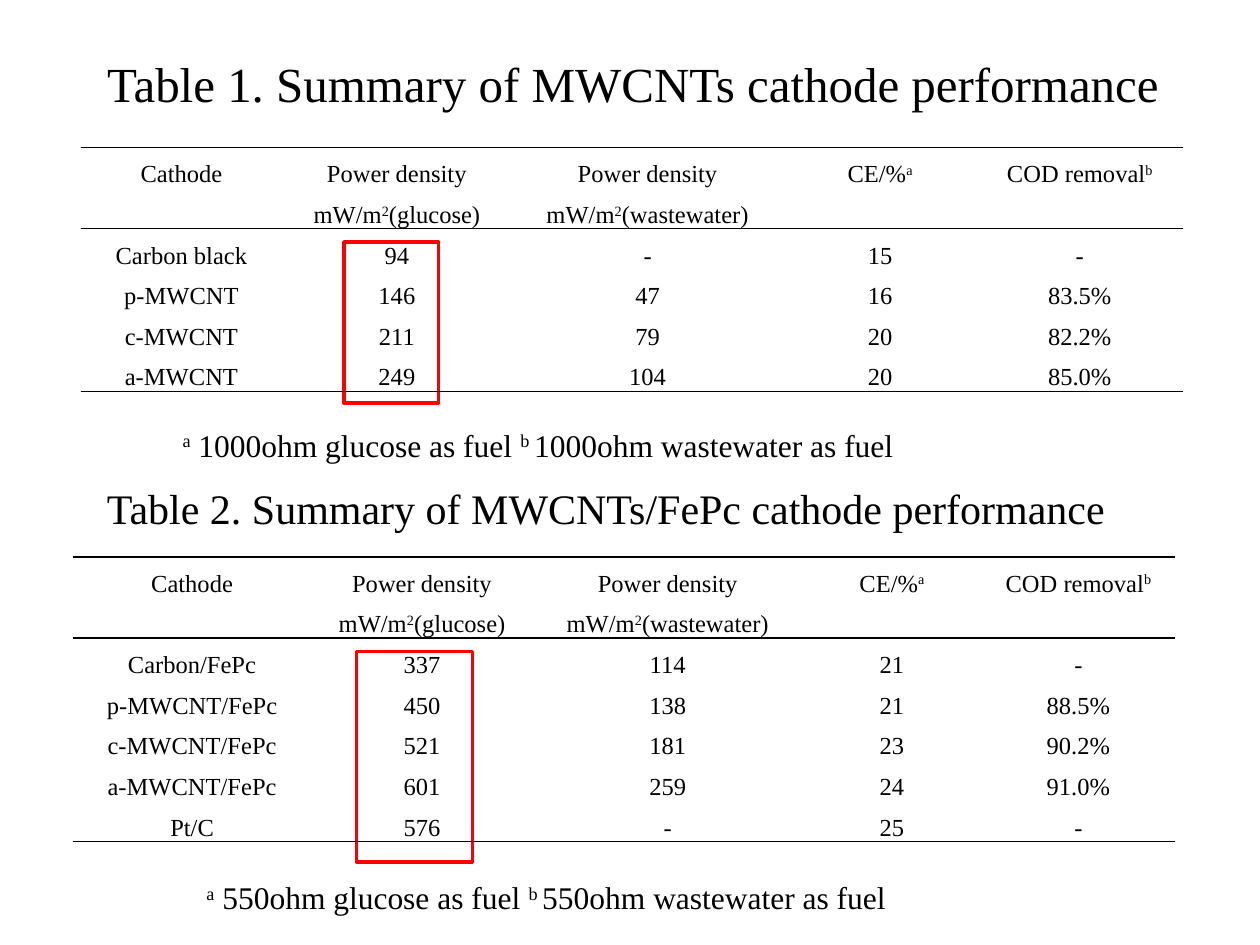
from dataclasses import dataclass

from lxml import etree
from pptx import Presentation
from pptx import util as u
from pptx.dml.color import RGBColor
from pptx.enum import shapes, text
from pptx.oxml import ns


@dataclass(frozen=True)
class Theme:
    font: str = "Times New Roman"
    ink: str = "000000"
    paper: str = "FFFFFF"
    mark: str = "FF0000"
    title: int = 28
    head: int = 24
    note: int = 18
    cell: int = 14
    rule: float = 1
    frame: float = 2


THEME = Theme()
PLAIN = "{2D5ABB26-0587-4C30-8999-92F81FD0307C}"
HEADS = ["Cathode", "Power density\nmW/m|2|(glucose)",
         "Power density\nmW/m|2|(wastewater)", "CE/%|a|", "COD removal|b|"]
CARBON = [
    ["Carbon black", "94", "-", "15", "-"],
    ["p-MWCNT", "146", "47", "16", "83.5%"],
    ["c-MWCNT", "211", "79", "20", "82.2%"],
    ["a-MWCNT", "249", "104", "20", "85.0%"],
]
IRON = [
    ["Carbon/FePc", "337", "114", "21", "-"],
    ["p-MWCNT/FePc", "450", "138", "21", "88.5%"],
    ["c-MWCNT/FePc", "521", "181", "23", "90.2%"],
    ["a-MWCNT/FePc", "601", "259", "24", "91.0%"],
    ["Pt/C", "576", "-", "25", "-"],
]


def write(frame, words, size, align=text.PP_ALIGN.LEFT, space=1.0):
    for row, line in enumerate(words.split("\n")):
        para = frame.paragraphs[0] if row == 0 else frame.add_paragraph()
        para.alignment = align
        para.line_spacing = space
        for part, piece in enumerate(line.split("|")):
            if not piece:
                continue
            run = para.add_run()
            run.text = piece
            run.font.name = THEME.font
            run.font.size = u.Pt(size)
            run.font.color.rgb = RGBColor.from_string(THEME.ink)
            if part % 2:
                run.font._element.set("baseline", "30000")


def place(shape, left, top, width, height):
    shape.left, shape.top = u.Inches(left), u.Inches(top)
    shape.width, shape.height = u.Inches(width), u.Inches(height)


def label(slide, words, box, size):
    shape = slide.shapes.add_textbox(*map(u.Inches, box))
    shape.text_frame.word_wrap = True
    write(shape.text_frame, words, size)


def frame(slide, *box):
    shape = slide.shapes.add_shape(shapes.MSO_SHAPE.RECTANGLE, *map(u.Inches, box))
    shape.shadow.inherit = False
    shape.fill.solid()
    shape.fill.fore_color.rgb = RGBColor.from_string(THEME.paper)
    shape.line.color.rgb = RGBColor.from_string(THEME.mark)
    shape.line.width = u.Pt(THEME.frame)


def border(cell, sides):
    props = cell._tc.get_or_add_tcPr()
    for spot, side in enumerate(sides):
        line = etree.Element(ns.qn("a:" + side), w=str(u.Pt(THEME.rule)))
        fill = etree.SubElement(line, ns.qn("a:solidFill"))
        etree.SubElement(fill, ns.qn("a:srgbClr"), val=THEME.ink)
        props.insert(spot, line)


def grid(slide, data, left, top, cols, rows):
    size = map(u.Inches, (left, top, sum(cols), sum(rows)))
    table = slide.shapes.add_table(2, len(cols), *size).table
    table.first_row = table.horz_banding = False
    table._tbl.tblPr.find(ns.qn("a:tableStyleId")).text = PLAIN
    for row, height in zip(table.rows, rows):
        row.height = u.Inches(height)
    body = ["\n".join(col) for col in zip(*data)]
    for c, width in enumerate(cols):
        table.columns[c].width = u.Inches(width)
        for r, words in enumerate((HEADS[c], body[c])):
            cell = table.cell(r, c)
            cell.margin_left = cell.margin_right = u.Inches(0.07)
            cell.margin_top = cell.margin_bottom = 0
            cell.fill.background()
            border(cell, ("lnT", "lnB"))
            write(cell.text_frame, words, THEME.cell,
                  align=text.PP_ALIGN.CENTER, space=1.5)


def head(slide, words, *box):
    title = slide.shapes.title
    place(title, *box)
    title.text_frame.word_wrap = True
    title.text_frame.vertical_anchor = text.MSO_ANCHOR.MIDDLE
    write(title.text_frame, words, THEME.title)


def main():
    deck = Presentation()
    deck.slide_width, deck.slide_height = u.Inches(10), u.Inches(7.5)
    slide = deck.slides.add_slide(deck.slide_layouts[5])
    head(slide, "Table 1. Summary of MWCNTs cathode performance",
         0.75, 0.37, 8.98, 0.57)
    frame(slide, 2.73, 1.92, 0.75, 1.28)
    frame(slide, 2.83, 5.17, 0.92, 1.67)
    grid(slide, CARBON, 0.64, 1.17, (1.6, 1.82, 2.16, 1.53, 1.64), (0.64, 1.29))
    grid(slide, IRON, 0.58, 4.42, (1.89, 1.76, 2.14, 1.42, 1.54), (0.64, 1.61))
    label(slide, "Table 2. Summary of MWCNTs/FePc cathode performance",
          (0.75, 3.78, 8.5, 0.5), THEME.head)
    label(slide, "|a| 1000ohm glucose as fuel |b |1000ohm wastewater as fuel",
          (1.35, 3.33, 6.29, 0.4), THEME.note)
    label(slide, "|a| 550ohm glucose as fuel |b |550ohm wastewater as fuel",
          (1.54, 6.92, 6.04, 0.4), THEME.note)
    deck.save("out.pptx")


if __name__ == "__main__":
    main()
